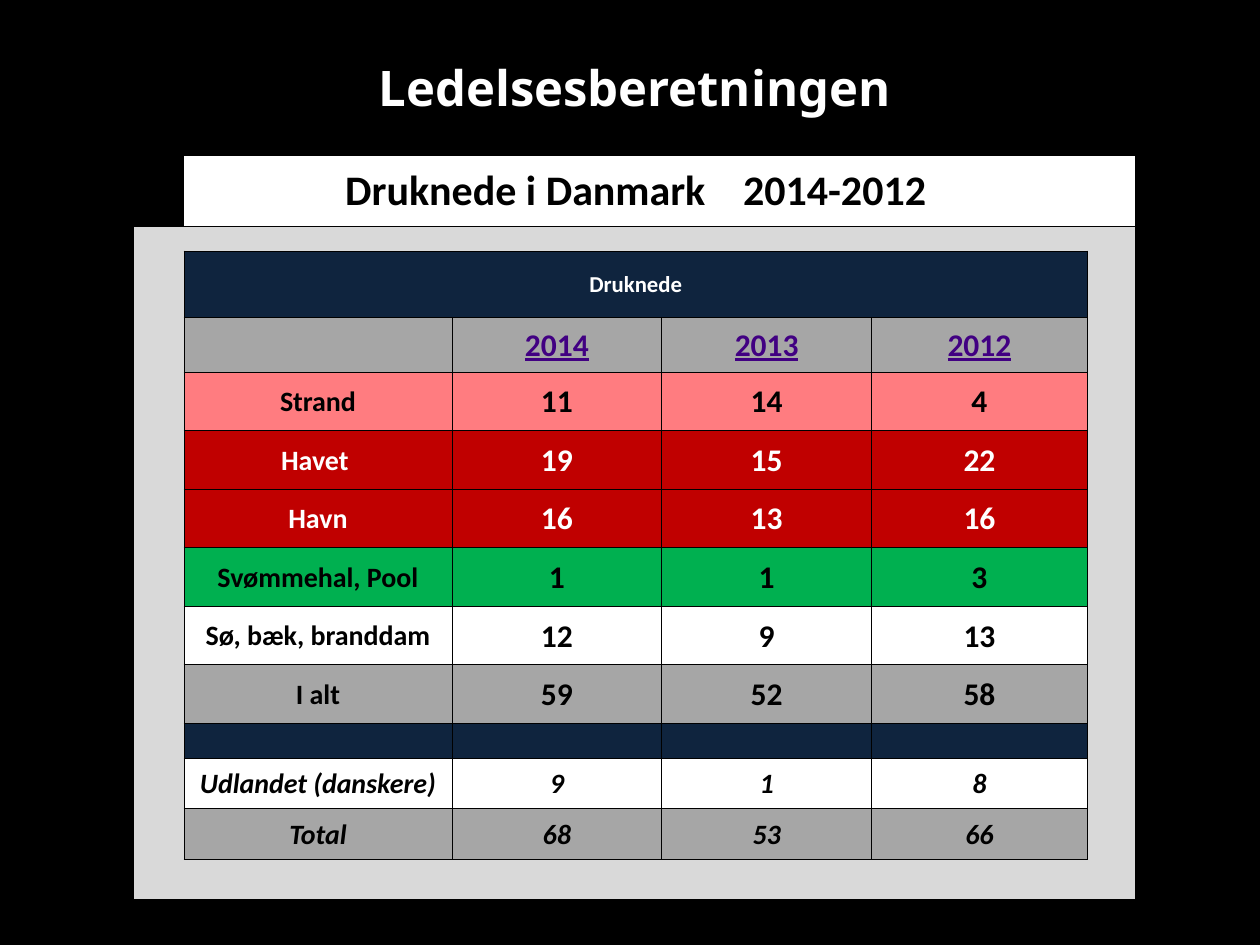
from lxml.etree import SubElement
from pptx import Presentation
from pptx.dml.color import RGBColor
from pptx.enum.shapes import MSO_SHAPE
from pptx.enum.text import MSO_ANCHOR, PP_ALIGN
from pptx.oxml.ns import qn
from pptx.util import Cm, Pt

COLORS = {
    "black": "000000", "white": "FFFFFF", "frame": "D9D9D9", "navy": "0F243E",
    "gray": "A6A6A6", "pink": "FF7C80", "red": "C00000", "green": "00B050",
    "purple": "410082",
}
TITLE = "Ledelsesberetningen"
HEADING = ("Druknede i Danmark", "2014-2012")
# fields: height, fill, text colour, label size, value size, style, cells
ROWS = [
    (1.43, "white", "black", 24, 24, "", []),
    (0.5, "frame", "black", 6, 6, "", []),
    (1.33, "navy", "white", 13, 13, "", ["Druknede"]),
    (1.11, "gray", "purple", 18, 18, "underline", ["", "2014", "2013", "2012"]),
    (1.18, "pink", "black", 16, 18, "", ["Strand", "11", "14", "4"]),
    (1.18, "red", "white", 16, 18, "", ["Havet ", "19", "15", "22"]),
    (1.18, "red", "white", 16, 18, "", ["Havn", "16", "13", "16"]),
    (1.18, "green", "black", 16, 18, "", ["Svømmehal, Pool", "1", "1", "3"]),
    (1.18, "white", "black", 16, 18, "", ["Sø, bæk, branddam", "12", "9", "13"]),
    (1.18, "gray", "black", 16, 18, "", ["I alt", "59", "52", "58"]),
    (0.7, "navy", "black", 6, 6, "", []),
    (1.02, "white", "black", 16, 16, "italic", ["Udlandet (danskere)", "9", "1", "8"]),
    (1.02, "gray", "black", 16, 16, "italic", ["Total", "68", "53", "66"]),
    (0.81, "frame", "black", 6, 6, "", []),
]
WIDTHS = [1.02, 5.4, 4.23, 4.23, 4.35, 0.97]
LEFT, TABLE_TOP = 2.69, 3.13
LAST_ROW, LAST_COLUMN = len(ROWS) - 1, len(WIDTHS) - 1
MERGED_ROWS = (0, 2, LAST_ROW)
NO_STYLE = "{2D5ABB26-0587-4C30-8999-92F81FD0307C}"


def color(name):
    return RGBColor.from_string(COLORS[name])


def paint(target, name):
    target.fill.solid()
    target.fill.fore_color.rgb = color(name)


def format_paragraph(paragraph, face, size, name, style=""):
    paragraph.alignment = PP_ALIGN.CENTER
    font = paragraph.font
    font.name, font.size, font.bold = face, Pt(size), True
    font.color.rgb = color(name)
    if style:
        setattr(font, style, True)


def draw_borders(cell, row, column):
    inner_row = 2 <= row < LAST_ROW
    inner_column = 0 < column < LAST_COLUMN
    edges = {
        "a:lnL": column == 0 or inner_row,
        "a:lnR": column == LAST_COLUMN or inner_row,
        "a:lnT": row <= 1 or inner_column,
        "a:lnB": row in (0, LAST_ROW) or inner_column,
    }
    properties = cell._tc.get_or_add_tcPr()
    for tag, visible in edges.items():
        line = SubElement(properties, qn(tag), w=str(Pt(0.5)))
        if visible:
            solid = SubElement(line, qn("a:solidFill"))
            SubElement(solid, qn("a:srgbClr"), val=COLORS["black"])
        else:
            SubElement(line, qn("a:noFill"))


def add_title(page):
    box = page.shapes.add_shape(
        MSO_SHAPE.RECTANGLE, Cm(LEFT), Cm(0.77), Cm(sum(WIDTHS)), Cm(1.96))
    box.shadow.inherit = False
    box.line.fill.background()
    paint(box, "black")
    solid = box._element.spPr.find(qn("a:solidFill"))
    SubElement(solid[0], qn("a:alpha"), val="30000")
    frame = box.text_frame
    frame.word_wrap = True
    frame.vertical_anchor = MSO_ANCHOR.MIDDLE
    frame.text = TITLE
    format_paragraph(frame.paragraphs[0], "Noto Sans", 28, "white")


def add_heading(paragraph):
    for text in (HEADING[0], " ", HEADING[1]):
        span = paragraph.add_run()
        span.text = text
        if text == " ":
            span.font._element.set("spc", "1600")


def add_table(page):
    height = sum(row[0] for row in ROWS)
    holder = page.shapes.add_table(
        len(ROWS), len(WIDTHS), Cm(LEFT), Cm(TABLE_TOP), Cm(sum(WIDTHS)), Cm(height))
    table = holder.table
    table.first_row = table.horz_banding = False
    table._tbl.tblPr.find(qn("a:tableStyleId")).text = NO_STYLE
    for column, width in enumerate(WIDTHS):
        table.columns[column].width = Cm(width)

    for row, (height, fill, ink, label_size, value_size, style, texts) in enumerate(ROWS):
        table.rows[row].height = Cm(height)
        for column in range(len(WIDTHS)):
            cell = table.cell(row, column)
            cell.vertical_anchor = MSO_ANCHOR.MIDDLE
            cell.margin_left = cell.margin_right = cell.margin_top = Cm(0.03)
            cell.margin_bottom = 0
            text = texts[column - 1] if 0 < column <= len(texts) else ""
            heading = row == 0 and column == 1
            paragraph = cell.text_frame.paragraphs[0]
            if heading:
                add_heading(paragraph)
            elif text:
                paragraph.text = text
            size = label_size if column == 1 else value_size
            format_paragraph(paragraph, "Calibri", size if text or heading else 6, ink, style)
            draw_borders(cell, row, column)
            outside = column in (0, LAST_COLUMN)
            if row == 0 and column == 0:
                cell.fill.background()
            else:
                paint(cell, "frame" if outside and row else fill)
        if row in MERGED_ROWS:
            table.cell(row, 1).merge(table.cell(row, LAST_COLUMN - 1))


def main():
    deck = Presentation()
    deck.slide_width, deck.slide_height = Cm(25.4), Cm(19.05)
    page = deck.slides.add_slide(deck.slide_layouts[6])
    paint(page.background, "black")
    add_title(page)
    add_table(page)
    deck.save("out.pptx")


if __name__ == "__main__":
    main()
